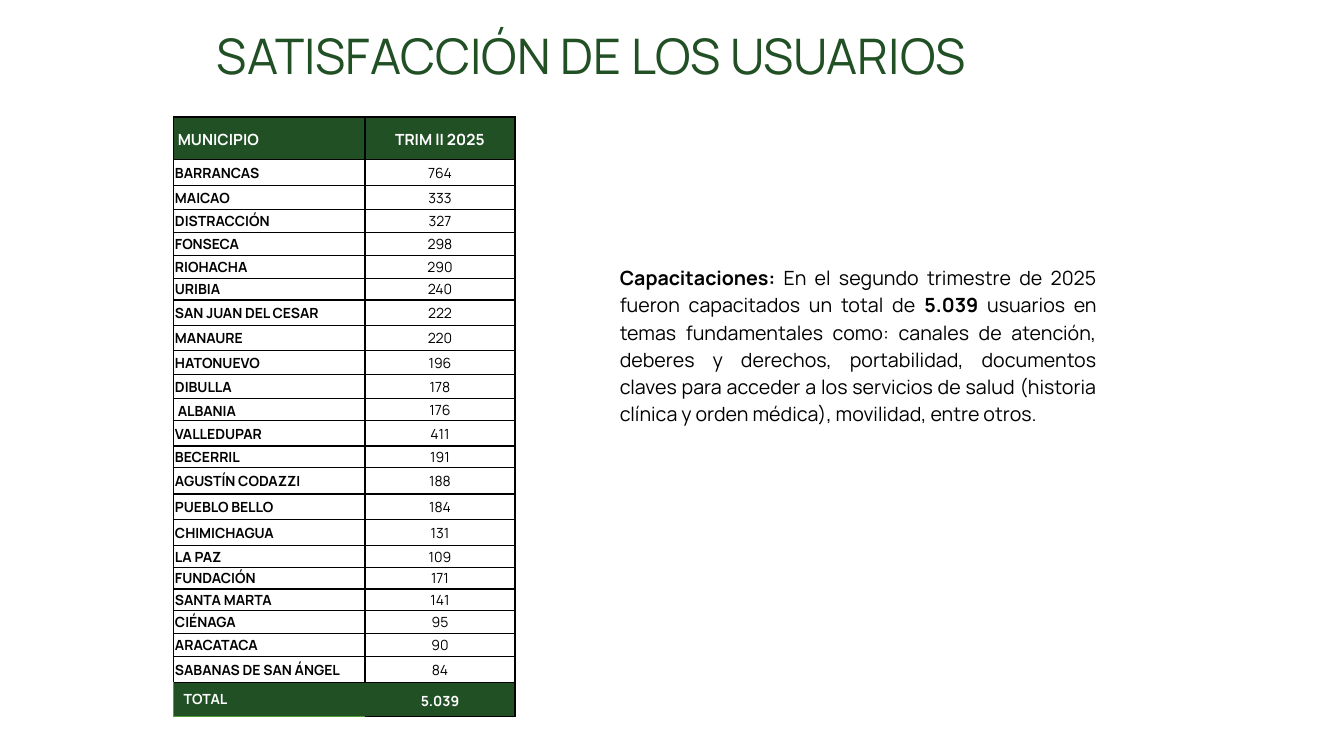
from lxml import etree
from pptx import Presentation
from pptx import util as u
from pptx.dml.color import RGBColor
from pptx.enum import text as t
from pptx.oxml import ns

GREEN, LEAF, BLACK, WHITE = "215025", "549E39", "000000", "FFFFFF"
LEFT, CENTER, JUSTIFY = t.PP_ALIGN.LEFT, t.PP_ALIGN.CENTER, t.PP_ALIGN.JUSTIFY
GRID = dict.fromkeys("LRTB", (BLACK, 1))

# Municipality, trained users, row height in cm
MUNICIPALITIES = [
    ("BARRANCAS", "764", 0.66),
    ("MAICAO", "333", 0.6),
    ("DISTRACCIÓN", "327", 0.58),
    ("FONSECA", "298", 0.58),
    ("RIOHACHA", "290", 0.57),
    ("URIBIA", "240", 0.55),
    ("SAN JUAN DEL CESAR", "222", 0.64),
    ("MANAURE", "220", 0.64),
    ("HATONUEVO", "196", 0.6),
    ("DIBULLA", "178", 0.61),
    ("ALBANIA", "176", 0.55),
    ("VALLEDUPAR", "411", 0.64),
    ("BECERRIL", "191", 0.55),
    ("AGUSTÍN CODAZZI", "188", 0.66),
    ("PUEBLO BELLO", "184", 0.64),
    ("CHIMICHAGUA", "131", 0.66),
    ("LA PAZ", "109", 0.55),
    ("FUNDACIÓN", "171", 0.54),
    ("SANTA MARTA", "141", 0.54),
    ("CIÉNAGA", "95", 0.58),
    ("ARACATACA", "90", 0.58),
    ("SABANAS DE SAN ÁNGEL", "84", 0.66),
]


def color(code):
    return RGBColor.from_string(code)


def write(paragraph, content, size=10, ink=BLACK, bold=False, align=LEFT, spacing=1.0):
    paragraph.alignment = align
    paragraph.line_spacing = spacing
    run = paragraph.add_run()
    run.text = content
    run.font.name = "Manrope"
    run.font.size = u.Pt(size)
    run.font.bold = bold
    run.font.color.rgb = color(ink)


def draw_borders(cell, borders):
    """Draw the sides given as {side: (colour, points)}; leave the others bare."""
    properties = cell._tc.get_or_add_tcPr()
    for side in "LRTB":
        ink, width = borders.get(side, (None, 0))
        line = etree.SubElement(properties, ns.qn(f"a:ln{side}"), w=str(u.Pt(width)))
        if ink is None:
            etree.SubElement(line, ns.qn("a:noFill"))
        else:
            fill = etree.SubElement(line, ns.qn("a:solidFill"))
            etree.SubElement(fill, ns.qn("a:srgbClr"), val=ink)


def fill_cell(cell, content, margins=(0.03, 0.02, 0.03, 0), shade=None, borders=GRID, **style):
    draw_borders(cell, borders)
    if shade:
        cell.fill.solid()
        cell.fill.fore_color.rgb = color(shade)
    else:
        cell.fill.background()
    cell.vertical_anchor = t.MSO_ANCHOR.MIDDLE
    cell.margin_left, cell.margin_top, cell.margin_right, cell.margin_bottom = map(u.Cm, margins)
    write(cell.text_frame.paragraphs[0], content, **style)


def add_heading(slide, left, top, width, height):
    title = slide.shapes.title
    title.left, title.top, title.width, title.height = map(u.Cm, (left, top, width, height))
    frame = title.text_frame
    frame.auto_size = t.MSO_AUTO_SIZE.NONE
    frame.vertical_anchor = t.MSO_ANCHOR.MIDDLE
    write(frame.paragraphs[0], "SATISFACCIÓN DE LOS USUARIOS", size=35, ink=GREEN, spacing=0.9)


def add_municipality_table(slide, left, top, width, height):
    heights = [1.07, *(row[2] for row in MUNICIPALITIES), 0.86]
    table = slide.shapes.add_table(
        len(heights), 2, *map(u.Cm, (left, top, width, height))).table
    table.first_row = table.horz_banding = False
    for column, share in zip(table.columns, (0.56, 0.44)):
        column.width = u.Cm(width * share)
    for row, row_height in zip(table.rows, heights):
        row.height = u.Cm(row_height)

    roomy = dict(margins=(0.1, 0, 0.1, 0), spacing=1.15)
    band = dict(shade=GREEN, ink=WHITE, bold=True)
    fill_cell(table.cell(0, 0), "MUNICIPIO", size=11, **band, **roomy)
    fill_cell(table.cell(0, 1), "TRIM lI 2025", size=11, align=CENTER, **band, **roomy)

    for index, (municipality, users, _) in enumerate(MUNICIPALITIES, 1):
        layout = dict(roomy, align=JUSTIFY) if municipality == "ALBANIA" else {}
        fill_cell(table.cell(index, 0), municipality, bold=True, **layout)
        fill_cell(table.cell(index, 1), users, align=CENTER)

    last = len(heights) - 1
    fill_cell(table.cell(last, 0), "TOTAL", margins=(0.25, 0.13, 0.25, 0.13),
              borders={"L": (LEAF, 0.5), "T": (BLACK, 1), "B": (LEAF, 0.5)}, **band)
    fill_cell(table.cell(last, 1), "5.039", align=CENTER,
              borders={side: GRID[side] for side in "RTB"}, **band, **roomy)


def add_training_summary(slide, left, top, width, height):
    frame = slide.shapes.add_textbox(*map(u.Cm, (left, top, width, height))).text_frame
    frame.word_wrap = True
    frame.auto_size = t.MSO_AUTO_SIZE.SHAPE_TO_FIT_TEXT
    for content, bold in (
        ("Capacitaciones: ", True),
        ("En el segundo trimestre de 2025 fueron capacitados un total de ", False),
        ("5.039 ", True),
        ("usuarios en temas fundamentales como: canales de atención, deberes y derechos, "
         "portabilidad, documentos claves para acceder a los servicios de salud "
         "(historia clínica y orden médica), movilidad, entre otros.", False),
    ):
        write(frame.paragraphs[0], content, size=14, bold=bold, align=JUSTIFY, spacing=1.15)


def main():
    deck = Presentation()
    deck.slide_width, deck.slide_height = u.Cm(33.87), u.Cm(19.05)
    slide = deck.slides.add_slide(deck.slide_layouts[5])
    add_heading(slide, 5.21, -0.36, 26.21, 3.68)
    add_municipality_table(slide, 4.38, 2.95, 8.6, 15.1)
    add_training_summary(slide, 15.37, 6.5, 12.52, 5.03)
    deck.save("out.pptx")


if __name__ == "__main__":
    main()
